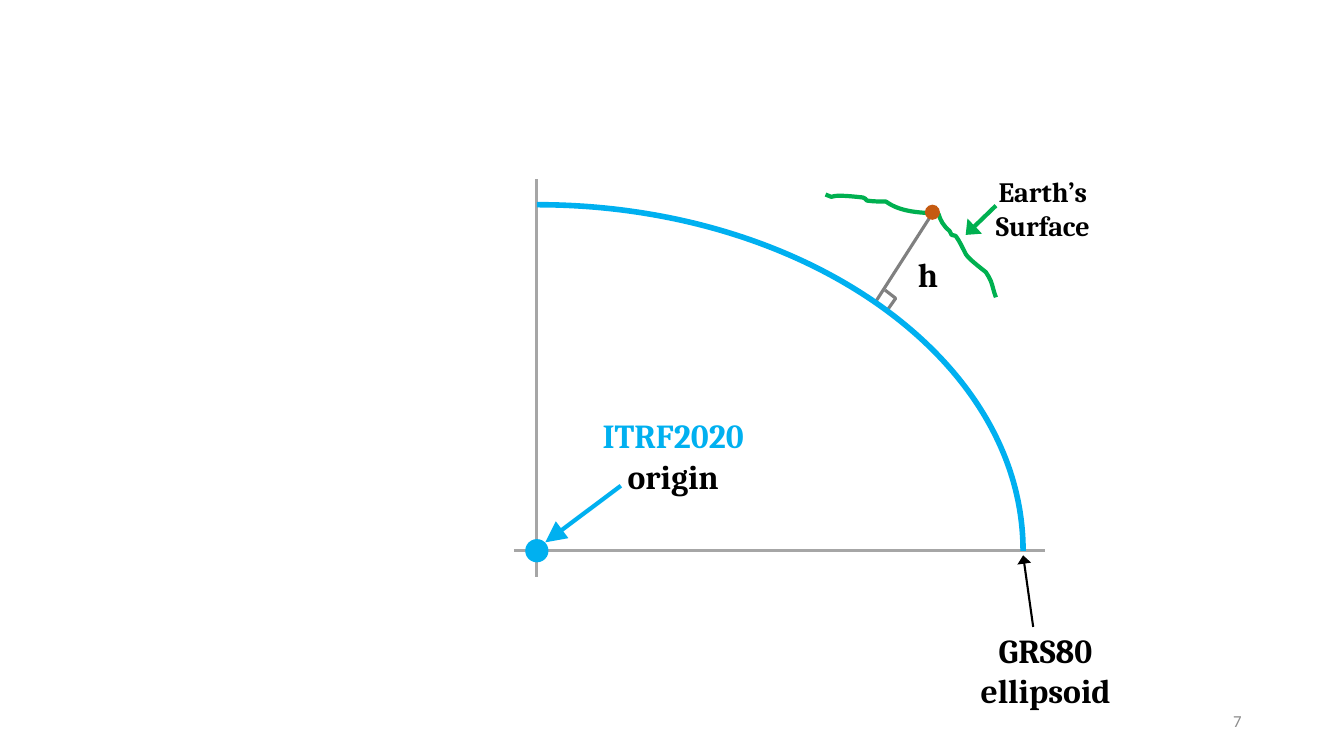
import pptx
import pptx.util
import pptx.dml.color
import pptx.enum.shapes
import pptx.enum.text
import pptx.oxml
import pptx.oxml.ns
from dataclasses import dataclass

Pt = pptx.util.Pt
Align = pptx.enum.text.PP_ALIGN
qn = pptx.oxml.ns.qn
space = pptx.oxml.ns.nsdecls("a")


@dataclass(frozen=True)
class Theme:
    blue: str = "00B0F0"
    green: str = "00B050"
    rust: str = "C55A11"
    black: str = "000000"
    axis: str = "A6A6A6"
    gray: str = "808080"
    pale: str = "8C8C8C"
    serif: str = "Cambria"
    sans: str = "Calibri"
    large: int = 24
    medium: int = 20
    small: int = 12


class Board:
    def __init__(self, slide, theme):
        self.shapes = slide.shapes
        self.theme = theme

    def color(self, code):
        return pptx.dml.color.RGBColor.from_string(code)

    def stroke(self, line, color, width):
        line.color.rgb = self.color(color)
        line.width = Pt(width)

    def line(self, start, end, color, width, head=None):
        ends = [Pt(v) for v in (*start, *end)]
        link = self.shapes.add_connector(
            pptx.enum.shapes.MSO_CONNECTOR.STRAIGHT, *ends)
        self.stroke(link.line, color, width)
        props = link._element.spPr
        if head:
            props.find(qn("a:ln")).append(pptx.oxml.parse_xml(
                f'<a:tailEnd {space} type="triangle" w="lg" len="{head}"/>'))
        props.append(pptx.oxml.parse_xml(f"<a:effectLst {space}/>"))

    def trace(self, points, color, width):
        first, *rest = [(Pt(x), Pt(y)) for x, y in points]
        pen = self.shapes.build_freeform(*first)
        pen.add_line_segments(rest, close=False)
        shape = pen.convert_to_shape()
        shape.shadow.inherit = False
        shape.fill.background()
        self.stroke(shape.line, color, width)
        return shape

    def curve(self, start, bends, color, width):
        points = [start]
        for bend in bends:
            points.extend(zip(bend[::2], bend[1::2]))
        shape = self.trace(points, color, width)
        legs = list(shape._element.iter(qn("a:lnTo")))
        for first in range(0, len(legs), 3):
            bezier = pptx.oxml.parse_xml(f"<a:cubicBezTo {space}/>")
            legs[first].addprevious(bezier)
            for leg in legs[first:first + 3]:
                bezier.append(leg[0])
                leg.getparent().remove(leg)

    def dot(self, x, y, size, color):
        shape = self.shapes.add_shape(
            pptx.enum.shapes.MSO_SHAPE.FLOWCHART_CONNECTOR,
            Pt(x - size / 2), Pt(y - size / 2), Pt(size), Pt(size))
        shape.shadow.inherit = False
        shape.fill.solid()
        shape.fill.fore_color.rgb = self.color(color)
        shape.line.fill.background()

    def text(self, spot, words, size, colors, font=None, bold=True,
             align=Align.CENTER, wrap=False):
        frame = self.shapes.add_textbox(*[Pt(v) for v in spot]).text_frame
        frame.word_wrap = wrap
        frame.vertical_anchor = pptx.enum.text.MSO_ANCHOR.MIDDLE
        frame.text = words
        for para, color in zip(frame.paragraphs, colors):
            para.alignment = align
            for run in para.runs:
                run.font.name = font or self.theme.serif
                run.font.size = Pt(size)
                run.font.bold = bold
                run.font.color.rgb = self.color(color)


def main():
    deck = pptx.Presentation()
    deck.slide_width, deck.slide_height = Pt(960), Pt(540)
    look = Theme()
    board = Board(deck.slides.add_slide(deck.slide_layouts[6]), look)

    center = 383.5, 393.4
    left, base = center
    top, right = 146.2, 730.8
    site = 666, 151.6
    dark = [look.black] * 2

    board.line((left, 412), (left, 127.7), look.axis, 2.25)
    board.line((367, base), (746.6, base), look.axis, 2.25)
    board.line((625.2, 216), (665.5, 153.2), look.gray, 2.25)
    board.trace([(632.2, 207.2), (639.8, 213.1), (633.8, 221.6)],
                look.gray, 2.25)

    ground = [
        (600.5, 143.3, 584.6, 137.5, 616.3, 141.1),
        (617.8, 141.1, 618.5, 142.6, 619.2, 143.3),
        (624.2, 144, 628.6, 144, 632.9, 144),
        (643.7, 151.9, 658.1, 151.9, 670.3, 152.6),
        (671.8, 157.7, 673.9, 161.3, 678.2, 164.9),
        (679, 165.6, 679, 167, 679.7, 167.8),
        (680.4, 168.5, 681.8, 167.8, 682.6, 168.5),
        (685.4, 172.1, 687.6, 177.1, 689.8, 181.4),
        (691.9, 185, 700.6, 191.5, 704.2, 194.4),
        (705.6, 196.6, 707, 198.7, 707.8, 200.9),
        (709.2, 204.5, 709.9, 208.8, 711.4, 212.4),
    ]
    board.curve((589.7, 139), ground, look.green, 3)

    board.text((415, 292.7, 131.8, 65.5), "ITRF2020\norigin", look.large,
               [look.blue, look.black], wrap=True)
    board.line((443.5, 347), (389.5, 387.4), look.blue, 3, "lg")
    board.text((703.2, 121, 83.5, 55.4), "Earth’s\nSurface",
               look.medium, dark)
    board.text((648.4, 178, 28.8, 36), "h", look.large, dark)
    board.text((691, 445.7, 111.6, 65.5), "GRS80\nellipsoid",
               look.large, dark)
    board.line((738, 447.8), (right, 396.7), look.black, 1.5, "med")
    board.line((711.4, 146.9), (689.8, 167.8), look.green, 3, "med")

    arc = [(575.3, top, right, 257, right, base)]
    board.curve((left, top), arc, look.blue, 4)
    board.dot(*site, 10.8, look.rust)
    board.dot(*center, 16.6, look.blue)
    board.text((678, 500.5, 216, 28.8), "7", look.small, [look.pale],
               font=look.sans, bold=False, align=Align.RIGHT, wrap=True)

    deck.save("out.pptx")


if __name__ == "__main__":
    main()
